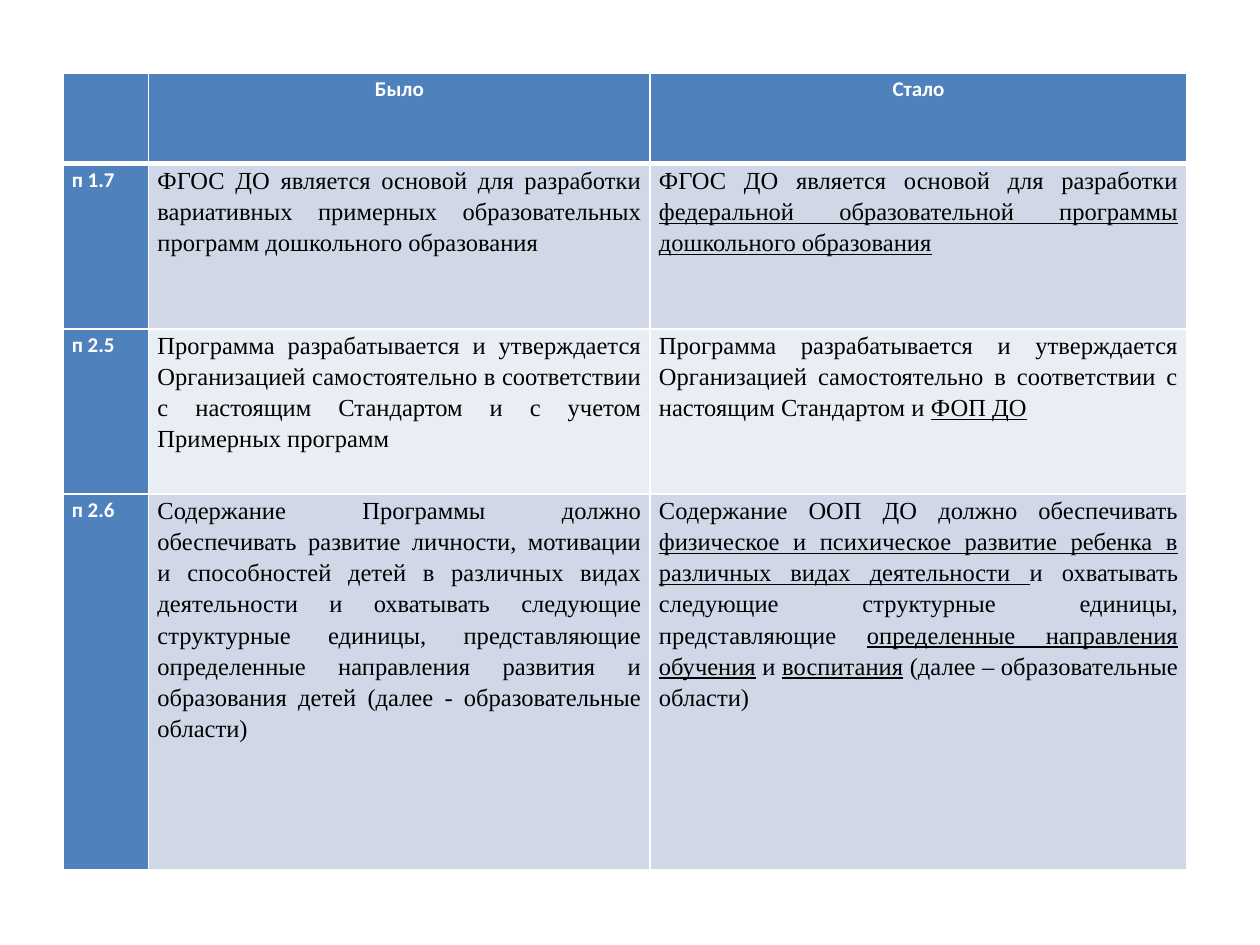
from dataclasses import dataclass

from lxml.etree import SubElement
from pptx import Presentation
from pptx.dml.color import RGBColor
from pptx.enum.text import PP_ALIGN
from pptx.oxml.ns import qn
from pptx.util import Inches, Pt


@dataclass(frozen=True)
class Theme:
    accent: str = "4F81BD"
    bands: tuple = ("D0D8E8", "E9EDF4")
    light: str = "FFFFFF"
    dark: str = "000000"
    label_font: str = "Calibri"
    label_size: int = 12
    body_font: str = "Times New Roman"
    body_size: int = 14
    line_spacing: float = 1.15
    side_margin: float = 0.07
    rule: int = 1
    header_rule: int = 3


COLUMN_WIDTHS = (0.68, 3.98, 4.26)
ROW_HEIGHTS = (0.72, 1.31, 1.31, 2.98)

# In each cell plain and underlined fragments alternate, starting with plain.
COMPARISON = [
    [[], ["Было"], ["Стало"]],
    [
        ["п 1.7"],
        ["ФГОС ДО является основой для разработки вариативных примерных "
         "образовательных программ дошкольного образования"],
        ["ФГОС ДО является основой для разработки ",
         "федеральной образовательной программы дошкольного образования"],
    ],
    [
        ["п 2.5"],
        ["Программа разрабатывается и утверждается Организацией самостоятельно "
         "в соответствии с настоящим Стандартом и с учетом Примерных программ"],
        ["Программа разрабатывается и утверждается Организацией самостоятельно "
         "в соответствии с настоящим Стандартом и ",
         "ФОП ДО"],
    ],
    [
        ["п 2.6"],
        ["Содержание Программы должно обеспечивать развитие личности, мотивации "
         "и способностей детей в различных видах деятельности и охватывать "
         "следующие структурные единицы, представляющие определенные направления "
         "развития и образования детей (далее - образовательные области)"],
        ["Содержание ООП ДО должно обеспечивать ",
         "физическое и психическое развитие ребенка в различных видах деятельности ",
         "и охватывать следующие структурные единицы, представляющие ",
         "определенные направления обучения",
         " и ",
         "воспитания",
         " (далее – образовательные области)"],
    ],
]


class SlideBuilder:
    def __init__(self, slide, theme):
        self.slide = slide
        self.theme = theme

    def table(self, left, top, widths, heights, content):
        table = self.slide.shapes.add_table(
            len(heights), len(widths), Inches(left), Inches(top),
            Inches(sum(widths)), Inches(sum(heights))).table
        for column, width in zip(table.columns, widths):
            column.width = Inches(width)
        for row, height in zip(table.rows, heights):
            row.height = Inches(height)
        for r, fragments_row in enumerate(content):
            for c, fragments in enumerate(fragments_row):
                self.cell(table.cell(r, c), r, c, fragments)

    def cell(self, cell, row, column, fragments):
        theme = self.theme
        is_label = row == 0 or column == 0
        self.borders(cell, row)
        cell.fill.solid()
        cell.fill.fore_color.rgb = RGBColor.from_string(
            theme.accent if is_label else theme.bands[(row - 1) % 2])
        cell.margin_left = cell.margin_right = Inches(theme.side_margin)
        cell.margin_top = cell.margin_bottom = 0

        paragraph = cell.text_frame.paragraphs[0]
        paragraph.alignment = PP_ALIGN.CENTER if row == 0 else PP_ALIGN.JUSTIFY
        paragraph.line_spacing = theme.line_spacing
        for index, fragment in enumerate(fragments):
            run = paragraph.add_run()
            run.text = fragment
            font = run.font
            font.name = theme.label_font if is_label else theme.body_font
            font.size = Pt(theme.label_size if is_label else theme.body_size)
            font.bold = is_label
            font.underline = index % 2 == 1
            font.color.rgb = RGBColor.from_string(
                theme.light if is_label else theme.dark)

    def borders(self, cell, row):
        """Rule all four sides, with a heavier line under the header row."""
        theme = self.theme
        widths = {
            "L": theme.rule,
            "R": theme.rule,
            "T": theme.header_rule if row == 1 else theme.rule,
            "B": theme.header_rule if row == 0 else theme.rule,
        }
        properties = cell._tc.get_or_add_tcPr()
        for side, width in widths.items():
            line = SubElement(properties, qn(f"a:ln{side}"), w=str(Pt(width)))
            fill = SubElement(line, qn("a:solidFill"))
            SubElement(fill, qn("a:srgbClr"), val=theme.light)


def main():
    presentation = Presentation()
    presentation.slide_width = Inches(10)
    presentation.slide_height = Inches(7.5)
    slide = presentation.slides.add_slide(presentation.slide_layouts[6])
    builder = SlideBuilder(slide, Theme())
    builder.table(0.5, 0.58, COLUMN_WIDTHS, ROW_HEIGHTS, COMPARISON)
    presentation.save("out.pptx")


if __name__ == "__main__":
    main()
